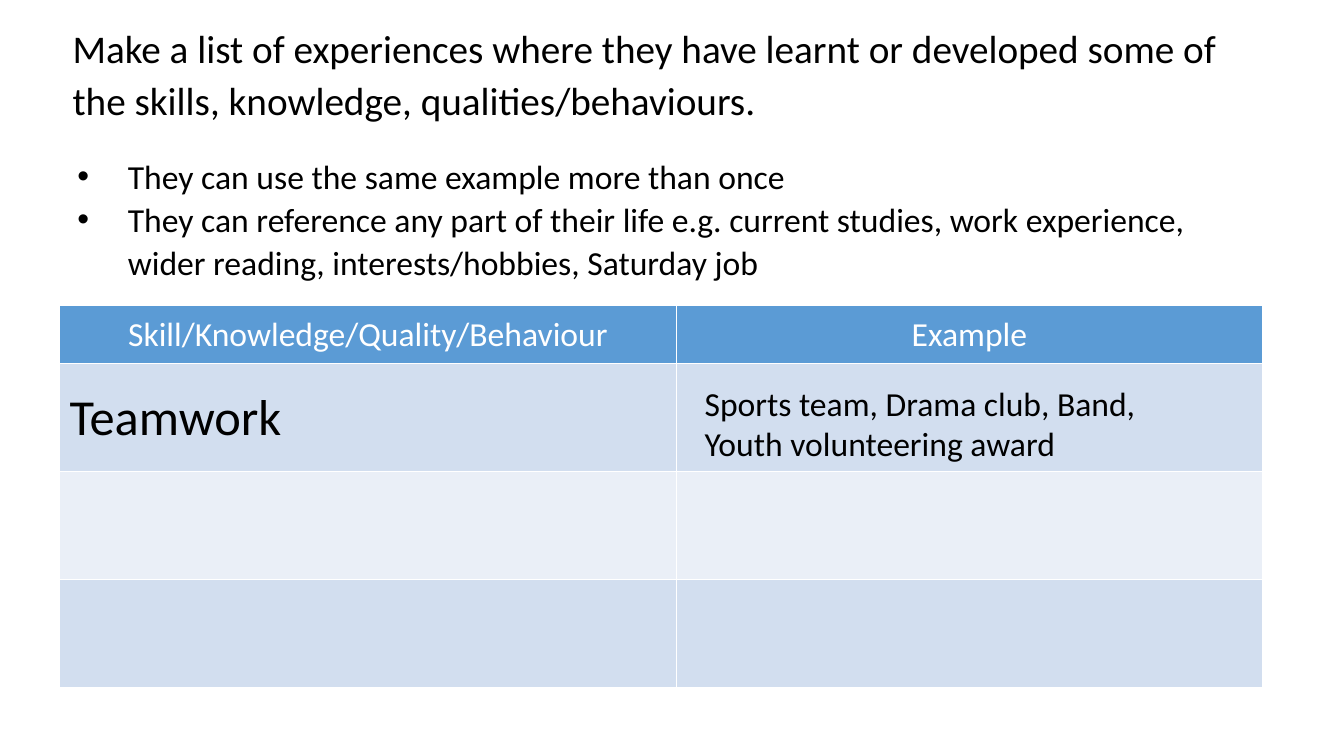
from pptx import Presentation
from pptx import util as u
from pptx.dml.color import RGBColor
from pptx.enum import text
from pptx.oxml import xmlchemy

COLOURS = {
    "text": "000000",
    "white": "FFFFFF",
    "header": "5B9BD5",
    "band_dark": "D2DEEF",
    "band_light": "EAEFF7",
}
FONT = "Calibri"
LEFT, WIDTH = 0.59, 11.93


def rgb(name):
    return RGBColor.from_string(COLOURS[name])


def format_text(paragraph, size, colour="text"):
    for run in paragraph.runs:
        run.font.name = FONT
        run.font.size = u.Pt(size)
        run.font.color.rgb = rgb(colour)


def indent(paragraph, left, first=0, bullet=None):
    """Indent a paragraph and give it a bullet if one is named."""
    paragraph.line_spacing = 1.07
    props = paragraph._p.get_or_add_pPr()
    props.set("marL", str(u.Inches(left)))
    props.set("indent", str(u.Inches(first)))
    if bullet:
        font = xmlchemy.OxmlElement("a:buFont")
        font.set("typeface", "Arial")
        mark = xmlchemy.OxmlElement("a:buChar")
        mark.set("char", bullet)
        props.extend([font, mark])


def add_borders(cell, bottom=1):
    """Draw white cell borders; they come before the fill in the XML."""
    props = cell._tc.get_or_add_tcPr()
    widths = {"a:lnL": 1, "a:lnR": 1, "a:lnT": 1, "a:lnB": bottom}
    for place, (tag, width) in enumerate(widths.items()):
        line = xmlchemy.OxmlElement(tag)
        line.set("w", str(u.Pt(width)))
        fill = xmlchemy.OxmlElement("a:solidFill")
        colour = xmlchemy.OxmlElement("a:srgbClr")
        colour.set("val", COLOURS["white"])
        fill.append(colour)
        line.append(fill)
        props.insert(place, line)


def add_plain_table(slide, top, columns, rows):
    frame = slide.shapes.add_table(
        len(rows), len(columns), u.Inches(LEFT), u.Inches(top),
        u.Inches(sum(columns)), u.Inches(sum(rows)))
    table = frame.table
    table.first_row = table.horz_banding = False
    for column, width in zip(table.columns, columns):
        column.width = u.Inches(width)
    for row, height in zip(table.rows, rows):
        row.height = u.Inches(height)
    return table


def add_text(slide, left, top, width, height, lines):
    box = slide.shapes.add_textbox(*map(u.Inches, (left, top, width, height)))
    frame = box.text_frame
    frame.word_wrap = True
    frame.text = "\n".join(lines)
    for paragraph in frame.paragraphs:
        format_text(paragraph, 24)
    return frame


def add_task(slide, wording):
    cell = add_plain_table(slide, 0.23, [WIDTH], [0.93]).cell(0, 0)
    cell.margin_left = cell.margin_right = u.Inches(0.05)
    cell.margin_top = cell.margin_bottom = 0
    cell.text = wording
    paragraph = cell.text_frame.paragraphs[0]
    indent(paragraph, 0.08)
    format_text(paragraph, 28)
    cell.fill.background()
    add_borders(cell, bottom=3)


def add_skills_table(slide, headings, skills):
    table = add_plain_table(slide, 3.03, [6.12, 5.81], [0.58] + [1.07] * 3)
    bands = ["header", "band_dark", "band_light", "band_dark"]
    for row, band in zip(table.rows, bands):
        for cell in row.cells:
            cell.vertical_anchor = text.MSO_ANCHOR.MIDDLE
            cell.fill.solid()
            cell.fill.fore_color.rgb = rgb(band)
            add_borders(cell)
    for cell, heading in zip(table.rows[0].cells, headings):
        cell.text = heading
        paragraph = cell.text_frame.paragraphs[0]
        paragraph.alignment = text.PP_ALIGN.CENTER
        format_text(paragraph, 24, "white")
    for number, skill in enumerate(skills, 1):
        cell = table.cell(number, 0)
        cell.text = skill
        format_text(cell.text_frame.paragraphs[0], 36)


def main():
    deck = Presentation()
    deck.slide_width, deck.slide_height = u.Inches(13.33), u.Inches(7.5)
    slide = deck.slides.add_slide(deck.slide_layouts[6])

    # Task
    add_task(slide, "Make a list of experiences where they have learnt or "
             "developed some of the skills, knowledge, qualities/behaviours.")

    # Skills and examples
    add_skills_table(slide, ["Skill/Knowledge/Quality/Behaviour", "Example"],
                     ["Teamwork"])
    add_text(slide, 6.89, 3.75, 5.29, 1.21,
             ["Sports team, Drama club, Band,", "Youth volunteering award"])

    # Guidance
    guidance = add_text(slide, LEFT, 1.47, WIDTH, 1.7, [
        "They can use the same example more than once",
        "They can reference any part of their life e.g. current studies, "
        "work experience, wider reading, interests/hobbies, Saturday job"])
    for tip in guidance.paragraphs:
        indent(tip, 0.58, -0.5, "•")

    deck.save("out.pptx")


if __name__ == "__main__":
    main()
